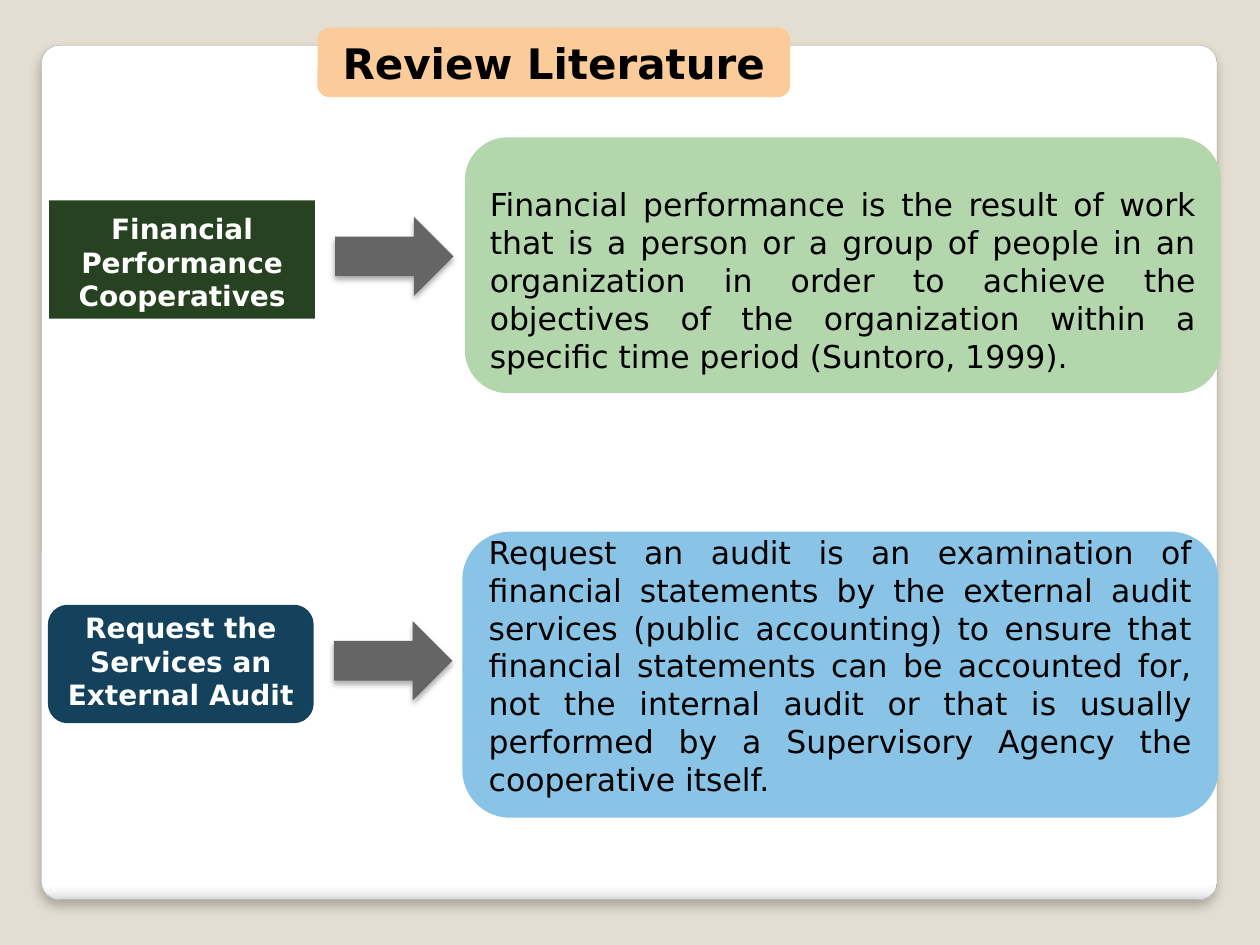
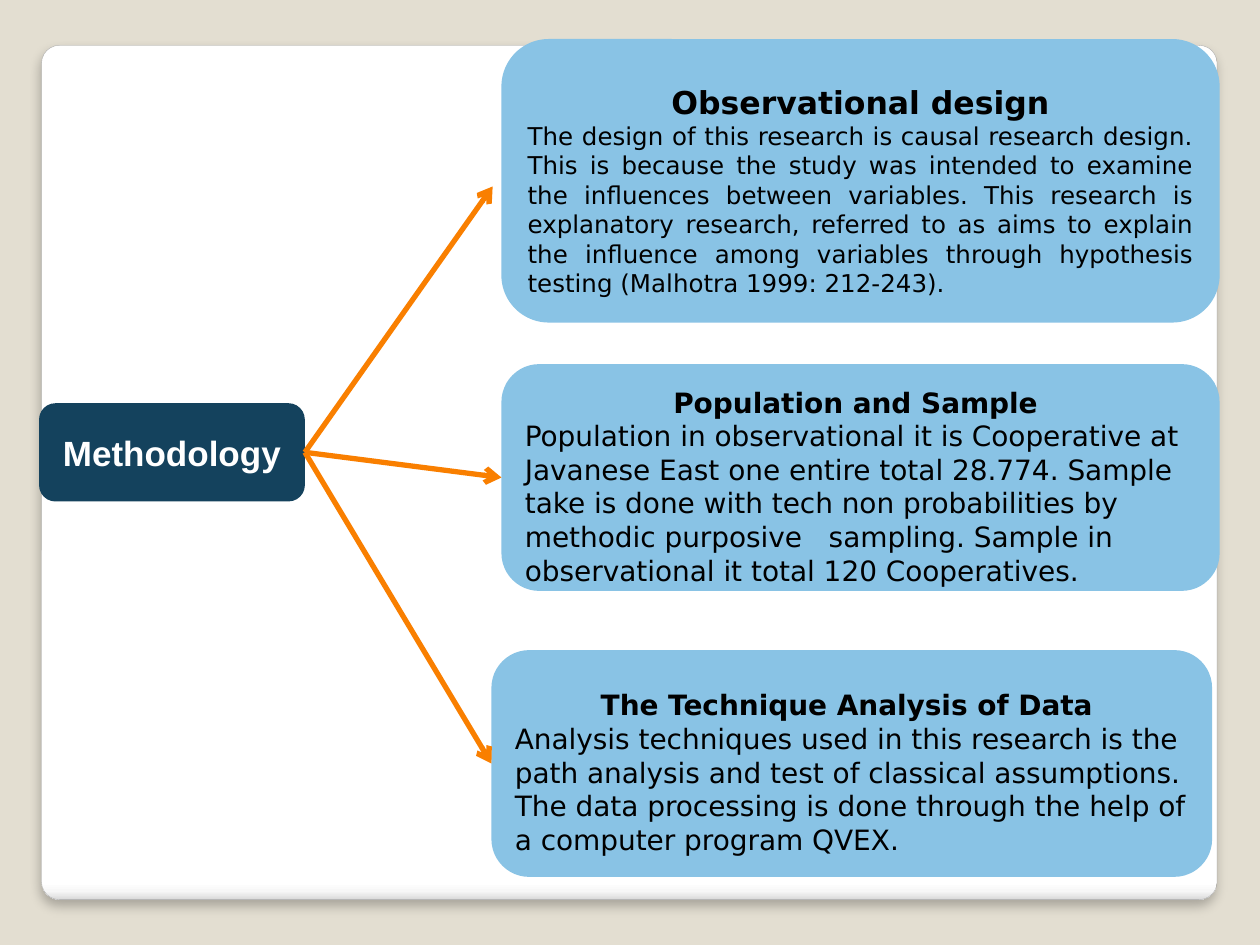
from lxml import etree
from pptx import Presentation
from pptx.dml.color import RGBColor
from pptx.enum.shapes import MSO_CONNECTOR as Link, MSO_SHAPE as Kind
from pptx.enum.text import MSO_ANCHOR as Anchor, MSO_AUTO_SIZE as Auto, PP_ALIGN as Align
from pptx.oxml import parse_xml
from pptx.oxml.ns import qn
from pptx.util import Inches, Pt

# Content
REVIEW = "Review Literature"
TOPICS = [
    dict(name="Financial Performance Cooperatives", kind=Kind.RECTANGLE,
         label=(0.39, 1.59), dark="274221", box=(3.69, 1.09, 6, 2.03), light="B3D6AC",
         text="Financial performance is the result of work that is a person or a group of "
              "people in an organization in order to achieve the objectives of the "
              "organization within a specific time period (Suntoro, 1999)."),
    dict(name="Request the Services an External Audit", kind=Kind.ROUNDED_RECTANGLE,
         label=(0.38, 4.8), dark="14425D", box=(3.67, 4.22, 6, 2.27), light="89C3E5",
         text="Request an audit is an examination of financial statements by the external "
              "audit services (public accounting) to ensure that financial statements can "
              "be accounted for, not the internal audit or that is usually performed by a "
              "Supervisory Agency the cooperative itself."),
]
METHOD = "Methodology"
STEPS = [
    dict(head="Observational design", sizes=(18, 14), align=Align.JUSTIFY,
         box=(3.98, 0.31, 5.7, 2.25), tip=(3.91, 1.48),
         text="The design of this research is causal research design. This is because the "
              "study was intended to examine the influences between variables. This "
              "research is explanatory research, referred to as aims to explain the "
              "influence among variables through hypothesis testing (Malhotra 1999: 212-243)."),
    dict(head="Population and Sample ", sizes=(16, 16), align=Align.LEFT,
         box=(3.98, 2.89, 5.7, 1.8), tip=None,
         text="Population in observational it is Cooperative at Javanese East one entire "
              "total 28.774. Sample take is done with tech non probabilities by methodic "
              "purposive   sampling. Sample in observational it total 120 Cooperatives."),
    dict(head="The Technique Analysis of Data ", sizes=(16, 16), align=Align.LEFT,
         box=(3.9, 5.16, 5.72, 1.8), tip=None,
         text="Analysis techniques used in this research is the path analysis and test of "
              "classical assumptions. The data processing is done through the help of a "
              "computer program QVEX."),
]

# Shared style
FONT = "DejaVu Sans"
BACK, EDGE, PEACH, NAVY = "E3DED1", "A4A4A4", "FBCC9A", "14425D"
SKY, GREY, ORANGE, BLACK, WHITE = "89C3E5", "656565", "F97F00", "000000", "FFFFFF"
CARD = (0.33, 0.36, 9.33, 6.78)
FADE = [(0, "FFFFFF"), (98, "FFFFFF"), (99, "F7F7F7"), (100, "DADADA")]
LABEL, ARROW = (2.11, 0.94), (0.94, 0.63)
NS = 'xmlns:a="http://schemas.openxmlformats.org/drawingml/2006/main"'


def rgb(code):
    return RGBColor.from_string(code)


def put(slide, box, fill, kind=Kind.ROUNDED_RECTANGLE):
    shape = slide.shapes.add_shape(kind, *map(Inches, box))
    shape.shadow.inherit = False
    shape.fill.solid()
    shape.fill.fore_color.rgb = rgb(fill)
    shape.line.fill.background()
    return shape


def write(shape, text, size=18, color=BLACK, bold=False, font=FONT,
          align=Align.CENTER, anchor=Anchor.MIDDLE, space=None, more=False):
    frame = shape.text_frame
    frame.word_wrap, frame.auto_size = True, Auto.NONE
    frame.vertical_anchor = anchor
    para = frame.add_paragraph() if more else frame.paragraphs[0]
    para.alignment = align
    if space:
        para.line_spacing = space
    run = para.add_run()
    run.text = text
    run.font.size, run.font.bold, run.font.name = Pt(size), bold, font
    run.font.color.rgb = rgb(color)


def shade(shape, alpha, blur, dist):
    """Give a shape a soft shadow straight below it."""
    old = shape.element.spPr.find(qn("a:effectLst"))
    old.append(parse_xml(
        f'<a:outerShdw {NS} blurRad="{Pt(blur)}" dist="{Pt(dist)}" dir="5400000" '
        f'algn="tl" rotWithShape="0"><a:srgbClr val="{BLACK}">'
        f'<a:alpha val="{alpha * 1000}"/></a:srgbClr></a:outerShdw>'))


def title(slide, text, box, fill, **style):
    """Lay the slide title over a rounded tab; return the tab."""
    tab = put(slide, box, fill)
    head = slide.shapes.title
    head.left, head.top, head.width, head.height = map(Inches, box)
    write(head, text, bold=True, **style)
    slide.shapes.element.append(head.element)
    return tab


def frame(deck, slide):
    """Set the background and move the white card to the master."""
    master = deck.slide_master
    master.background.fill.solid()
    master.background.fill.fore_color.rgb = rgb(BACK)
    card = put(slide, CARD, WHITE)
    card.adjustments[0] = 0.021
    card.line.color.rgb, card.line.width = rgb(EDGE), Pt(0.16)
    stops = "".join(f'<a:gs pos="{pos * 1000}"><a:srgbClr val="{code}"/></a:gs>'
                    for pos, code in FADE)
    props = card.element.spPr
    props.replace(props.find(qn("a:solidFill")), parse_xml(
        f'<a:gradFill {NS}><a:gsLst>{stops}</a:gsLst><a:lin ang="5400000" scaled="0"/></a:gradFill>'))
    shade(card, 25, 6, 4)
    master.shapes.element.insert(2, card.element)


def review(slide):
    title(slide, REVIEW, (2.52, 0.22, 3.75, 0.55), PEACH, size=24)
    for topic in TOPICS:
        left, top = topic["label"]
        body = put(slide, topic["box"], topic["light"])
        write(body, topic["text"], align=Align.JUSTIFY, anchor=Anchor.BOTTOM)
        label = put(slide, (left, top, *LABEL), topic["dark"], topic["kind"])
        write(label, topic["name"], size=16, color=WHITE, bold=True, anchor=Anchor.BOTTOM)
        arrow = put(slide, (left + 2.27, top + 0.13, *ARROW), GREY, Kind.RIGHT_ARROW)
        shade(arrow, 32, 3.5, 2.2)


def method(slide):
    tab = title(slide, METHOD, (0.31, 3.2, 2.11, 0.78), NAVY,
                size=20, color=WHITE, font="Arial")
    for step in STEPS:
        box = put(slide, step["box"], SKY)
        big, small = step["sizes"]
        write(box, step["head"], size=big, bold=True, space=1.5)
        write(box, step["text"], size=small, align=step["align"], more=True)
        # Arrow from the title tab
        tip = step["tip"] or (0, 0)
        line = slide.shapes.add_connector(Link.STRAIGHT, 0, 0, *map(Inches, tip))
        line.begin_connect(tab, 3)
        if not step["tip"]:
            line.end_connect(box, 1)
        line.line.color.rgb, line.line.width = rgb(ORANGE), Pt(3)
        props = line.element.spPr
        etree.SubElement(props.find(qn("a:ln")), qn("a:tailEnd"), type="arrow")
        etree.SubElement(props, qn("a:effectLst"))


def main():
    deck = Presentation()
    deck.slide_width, deck.slide_height = Inches(10), Inches(7.5)
    first, second = (deck.slides.add_slide(deck.slide_layouts[5]) for _ in range(2))
    frame(deck, first)
    review(first)
    method(second)
    deck.save("out.pptx")


if __name__ == "__main__":
    main()
